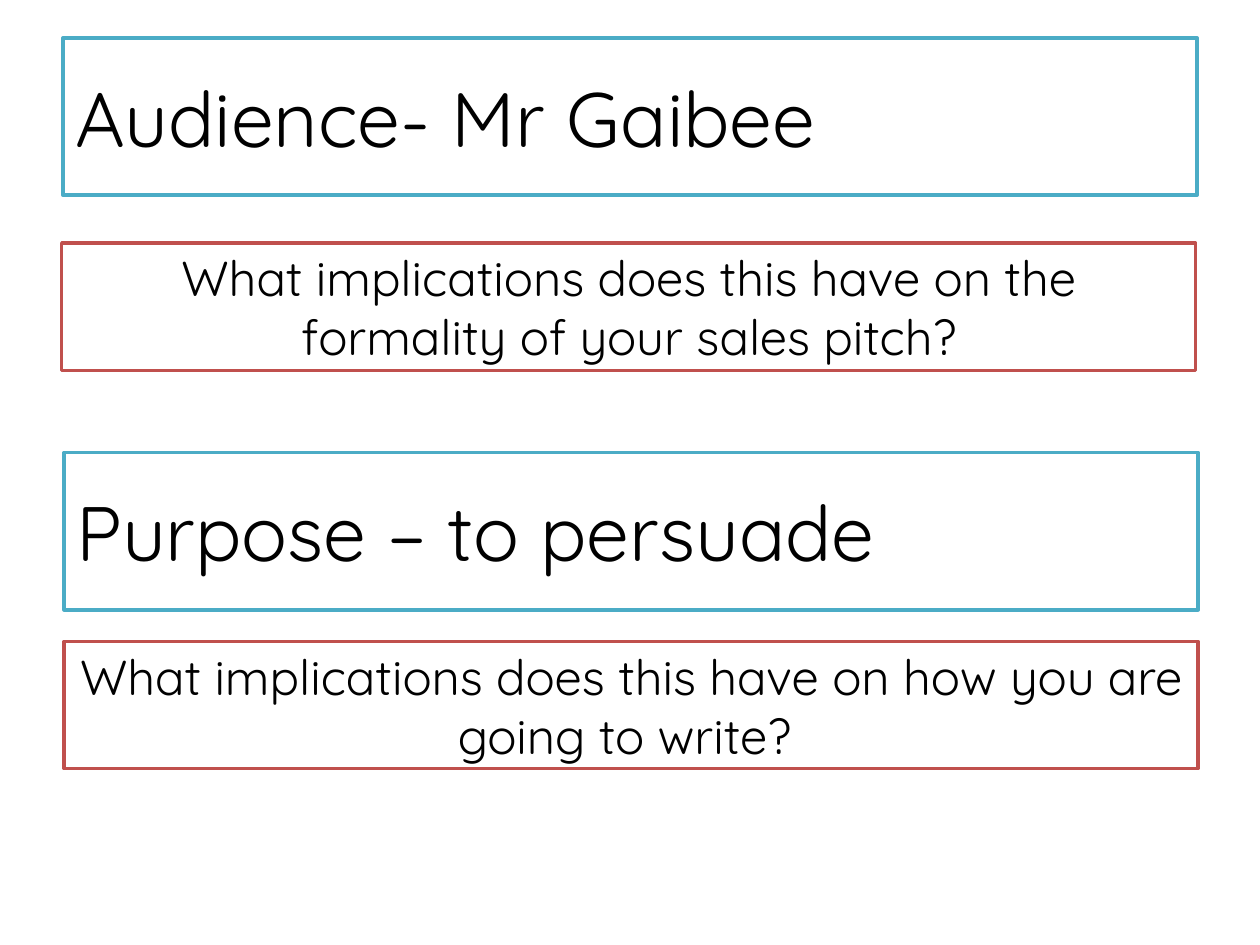
"""Build a slide on the audience and purpose of a sales pitch."""
from pptx import Presentation
from pptx.dml.color import RGBColor as RGB
from pptx.enum.shapes import MSO_SHAPE as Shape
from pptx.enum.text import MSO_ANCHOR as Anchor, PP_ALIGN as Align
from pptx.util import Pt

COLORS = {"paper": "FFFFFF", "ink": "000000", "teal": "4BACC6", "red": "C0504D"}
FONT = "Quicksand"
WIDTH = 648
STYLES = {
    "heading": {"height": 90, "size": 44, "line": "teal", "align": Align.JUSTIFY},
    "question": {"height": 72.72, "size": 28, "line": "red", "align": Align.CENTER},
}
BOXES = [
    ("heading", 36, 21.6, "Audience- Mr Gaibee"),
    ("question", 35.28, 138.96,
     "What implications does this have on the formality of your sales pitch?"),
    ("heading", 36.72, 258.48, "Purpose – to persuade"),
    ("question", 36.72, 366.48,
     "What implications does this have on how you are going to write? "),
]


def color(name):
    return RGB.from_string(COLORS[name])


def add_box(s, kind, left, top, text):
    style = STYLES[kind]
    sp = s.shapes.add_shape(
        Shape.RECTANGLE, Pt(left), Pt(top), Pt(WIDTH), Pt(style["height"]))
    sp.shadow.inherit = False
    sp.fill.solid()
    sp.fill.fore_color.rgb = color("paper")
    sp.line.color.rgb = color(style["line"])
    sp.line.width = Pt(2)
    tf = sp.text_frame
    tf.word_wrap = True
    tf.vertical_anchor = Anchor.MIDDLE
    p = tf.paragraphs[0]
    p.text = text
    p.alignment = style["align"]
    p.font.name = FONT
    p.font.size = Pt(style["size"])
    p.font.color.rgb = color("ink")


def main():
    prs = Presentation()
    prs.slide_width, prs.slide_height = Pt(720), Pt(540)
    s = prs.slides.add_slide(prs.slide_layouts[6])
    for box in BOXES:
        add_box(s, *box)
    prs.save("out.pptx")


if __name__ == "__main__":
    main()
